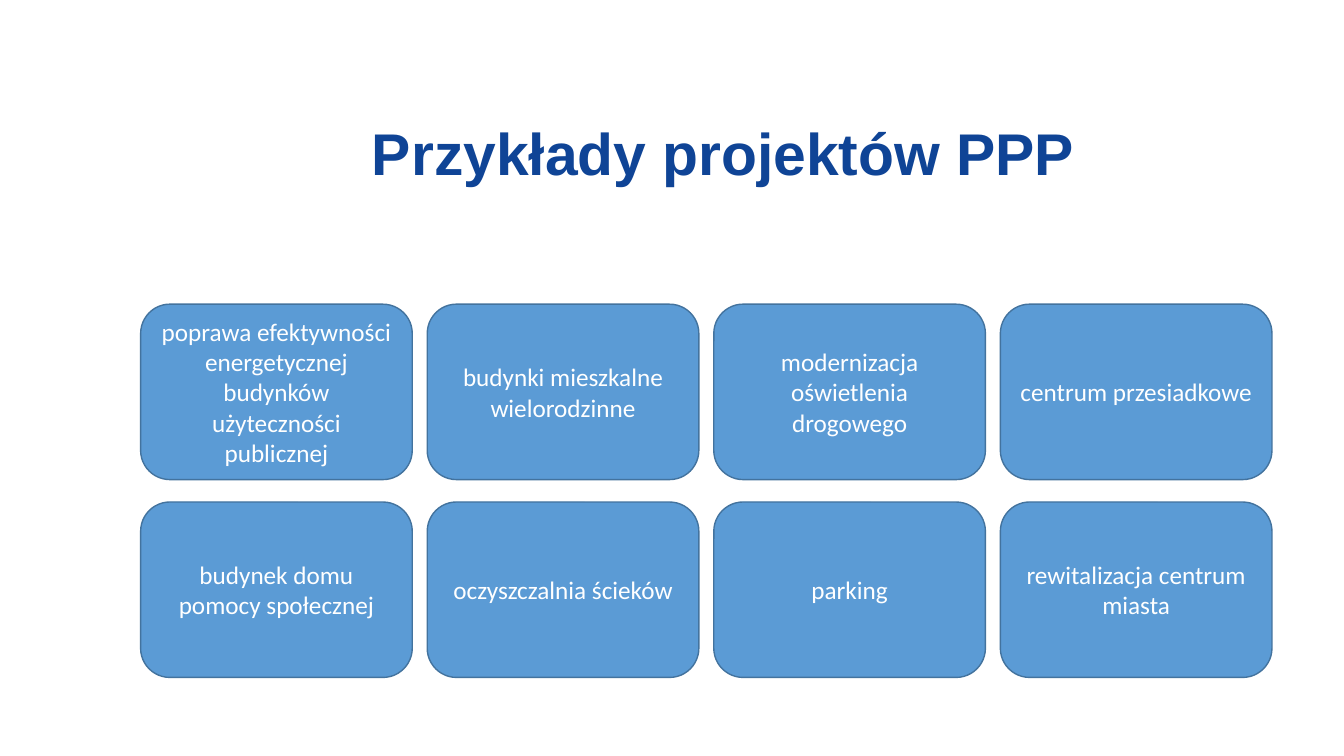
import pptx
import pptx.util
import pptx.dml.color
import pptx.enum.shapes
import pptx.enum.text

Pt = pptx.util.Pt
NAVY = pptx.dml.color.RGBColor(0x0F, 0x44, 0x96)
BLUE = pptx.dml.color.RGBColor(0x5B, 0x9B, 0xD5)
EDGE = pptx.dml.color.RGBColor(0x43, 0x73, 0x9E)
WHITE = pptx.dml.color.RGBColor(0xFF, 0xFF, 0xFF)

PROJECTS = [
    "poprawa efektywności energetycznej budynków użyteczności publicznej",
    "budynki mieszkalne wielorodzinne",
    "modernizacja oświetlenia drogowego",
    "centrum przesiadkowe",
    "budynek domu pomocy społecznej",
    "oczyszczalnia ścieków",
    "parking",
    "rewitalizacja centrum miasta",
]
COLUMNS = 4
GRID_LEFT, GRID_TOP = 100.5, 217.3
CARD_WIDTH, CARD_HEIGHT = 194, 125.3
COLUMN_STEP, ROW_STEP = 204.7, 141.3

presentation = pptx.Presentation()
presentation.slide_width = Pt(960)
presentation.slide_height = Pt(540)
slide = presentation.slides.add_slide(presentation.slide_layouts[5])

heading = slide.shapes.title
heading.left, heading.top = Pt(258.5), Pt(90.7)
heading.width, heading.height = Pt(641.5), Pt(42.5)
heading.text_frame.text = "Przykłady projektów PPP"
heading.text_frame.auto_size = pptx.enum.text.MSO_AUTO_SIZE.NONE
heading.text_frame.vertical_anchor = pptx.enum.text.MSO_ANCHOR.MIDDLE
heading_line = heading.text_frame.paragraphs[0]
heading_line.alignment = pptx.enum.text.PP_ALIGN.LEFT
heading_line.line_spacing = 0.9
heading_line.font.name = "Arial"
heading_line.font.size = Pt(42)
heading_line.font.bold = True
heading_line.font.color.rgb = NAVY

for index, project in enumerate(PROJECTS):
    row, column = divmod(index, COLUMNS)
    card = slide.shapes.add_shape(
        pptx.enum.shapes.MSO_SHAPE.ROUNDED_RECTANGLE,
        Pt(GRID_LEFT + column * COLUMN_STEP),
        Pt(GRID_TOP + row * ROW_STEP),
        Pt(CARD_WIDTH),
        Pt(CARD_HEIGHT),
    )
    card.shadow.inherit = False
    card.fill.solid()
    card.fill.fore_color.rgb = BLUE
    card.line.color.rgb = EDGE
    card.line.width = Pt(1)
    card.text_frame.word_wrap = True
    card.text_frame.vertical_anchor = pptx.enum.text.MSO_ANCHOR.MIDDLE
    card.text_frame.text = project
    label = card.text_frame.paragraphs[0]
    label.alignment = pptx.enum.text.PP_ALIGN.CENTER
    label.font.name = "Calibri"
    label.font.size = Pt(18)
    label.font.color.rgb = WHITE

presentation.save("out.pptx")
